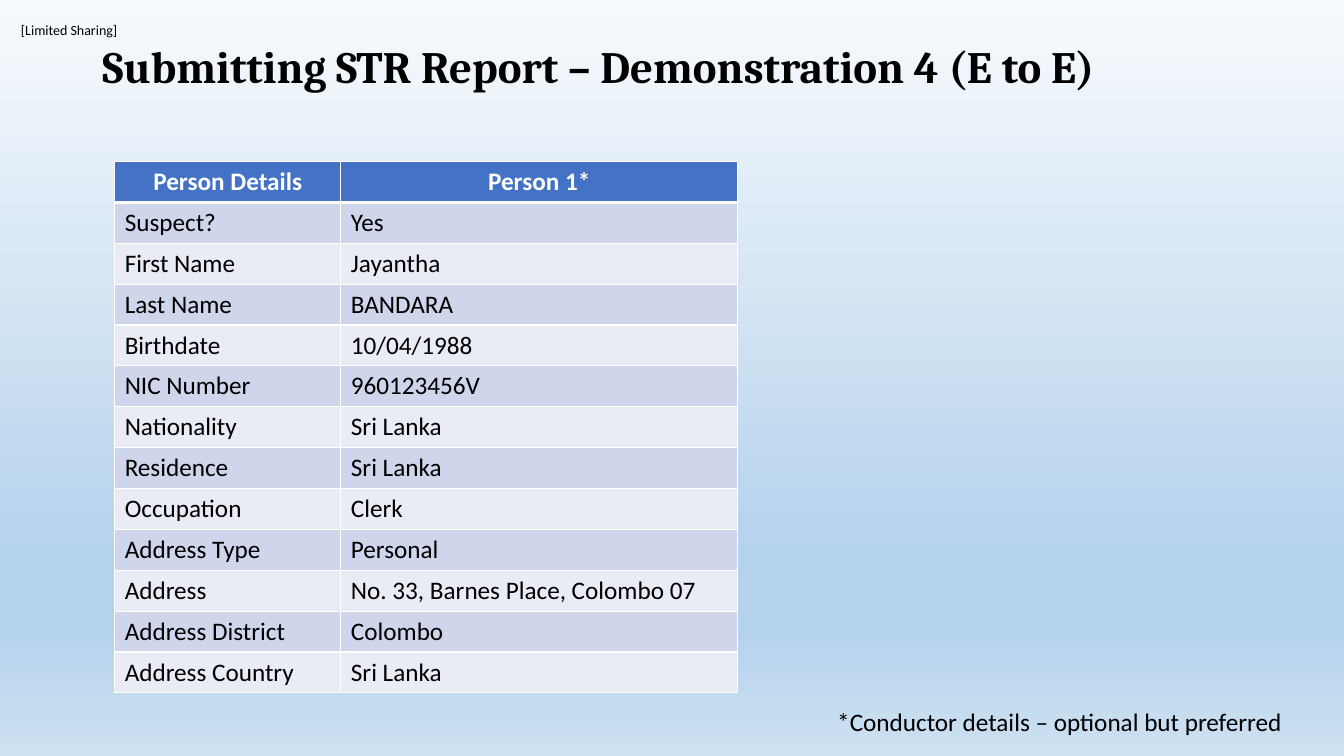
import pptx
import pptx.dml.color
import pptx.enum.text
import pptx.oxml
import pptx.oxml.ns
import pptx.util

Cm = pptx.util.Cm
Pt = pptx.util.Pt
ALIGN = pptx.enum.text.PP_ALIGN
ANCHOR = pptx.enum.text.MSO_ANCHOR

COLOURS = {
    "text": "000000",
    "header text": "FFFFFF",
    "border": "FFFFFF",
    "header": "4472C4",
    "odd row": "CFD5EA",
    "even row": "E9EBF5",
}
BACKGROUND_STOPS = [(0, "F7FAFD"), (74, "B5D2EC"), (83, "B5D2EC"), (100, "CEE1F2")]

BODY_FONT = {"name": "Calibri", "size": Pt(18), "bold": False}
HEADER_FONT = {**BODY_FONT, "bold": True}
LABEL_FONT = {**BODY_FONT, "size": Pt(10)}
TITLE_FONT = {"name": "Cambria", "size": Pt(32), "bold": True}

# text, (left, top, width, height) in cm, font, text frame format, paragraph format
NO_MARGINS = dict.fromkeys(
    ("margin_left", "margin_top", "margin_right", "margin_bottom"), 0)
TEXTS = [
    ("[Limited Sharing]", (0.53, 0.53, 2.52, 0.43), LABEL_FONT,
     {"word_wrap": False, **NO_MARGINS}, {}),
    ("Submitting STR Report – Demonstration 4 (E to E)", (2.33, 0.64, 29.21, 2.2),
     TITLE_FONT, {"word_wrap": True, "vertical_anchor": ANCHOR.MIDDLE},
     {"line_spacing": 0.9}),
    ("*Conductor details – optional but preferred", (20.85, 17.67, 11.86, 1.03),
     BODY_FONT, {"word_wrap": False}, {}),
]

PERSON_ROWS = [
    ("Person Details", "Person 1*"),
    ("Suspect?", "Yes"),
    ("First Name", "Jayantha"),
    ("Last Name", "BANDARA"),
    ("Birthdate", "10/04/1988"),
    ("NIC Number", "960123456V"),
    ("Nationality", "Sri Lanka"),
    ("Residence", "Sri Lanka"),
    ("Occupation", "Clerk"),
    ("Address Type", "Personal"),
    ("Address", "No. 33, Barnes Place, Colombo 07"),
    ("Address District", "Colombo"),
    ("Address Country", "Sri Lanka"),
]
TABLE_LEFT, TABLE_TOP = 2.89, 4.07
COLUMN_WIDTHS = (5.7, 10)
ROW_HEIGHT = 1.03


def rgb(name):
    return pptx.dml.color.RGBColor.from_string(COLOURS[name])


def apply_format(target, values):
    for name, value in values.items():
        setattr(target, name, value)


def write_text(text_frame, text, font, colour, paragraph_format):
    paragraph = text_frame.paragraphs[0]
    apply_format(paragraph, paragraph_format)
    run = paragraph.add_run()
    run.text = text
    apply_format(run.font, font)
    run.font.color.rgb = rgb(colour)


def paint_background(slide):
    """Fill the slide from top to bottom with BACKGROUND_STOPS."""
    fill = slide.background.fill
    fill.gradient()
    fill.gradient_angle = 270
    stop_list = next(slide.element.iter(pptx.oxml.ns.qn("a:gsLst")))
    for stop in list(stop_list):
        stop_list.remove(stop)
    for percent, colour in BACKGROUND_STOPS:
        stop_list.append(pptx.oxml.parse_xml(
            f'<a:gs {pptx.oxml.ns.nsdecls("a")} pos="{percent * 1000}">'
            f'<a:srgbClr val="{colour}"/></a:gs>'))


def add_borders(cell, widths):
    """Draw cell borders; widths maps the sides L, R, T and B to points."""
    properties = cell._tc.get_or_add_tcPr()
    for side, width in widths.items():
        properties.append(pptx.oxml.parse_xml(
            f'<a:ln{side} {pptx.oxml.ns.nsdecls("a")} w="{Pt(width)}"><a:solidFill>'
            f'<a:srgbClr val="{COLOURS["border"]}"/></a:solidFill></a:ln{side}>'))


def add_text(slide, text, box, font, frame_format, paragraph_format):
    text_frame = slide.shapes.add_textbox(*map(Cm, box)).text_frame
    apply_format(text_frame, frame_format)
    write_text(text_frame, text, font, "text", paragraph_format)


def add_person_table(slide):
    table = slide.shapes.add_table(
        len(PERSON_ROWS), len(COLUMN_WIDTHS), Cm(TABLE_LEFT), Cm(TABLE_TOP),
        Cm(sum(COLUMN_WIDTHS)), Cm(ROW_HEIGHT * len(PERSON_ROWS))).table
    for column, width in zip(table.columns, COLUMN_WIDTHS):
        column.width = Cm(width)
    for row_index, values in enumerate(PERSON_ROWS):
        table.rows[row_index].height = Cm(ROW_HEIGHT)
        is_header = row_index == 0
        if is_header:
            fill, colour, font = "header", "header text", HEADER_FONT
        else:
            fill = "odd row" if row_index % 2 else "even row"
            colour, font = "text", BODY_FONT
        alignment = ALIGN.CENTER if is_header else ALIGN.LEFT
        borders = {"L": 1, "R": 1, "T": 3 if row_index == 1 else 1,
                   "B": 3 if is_header else 1}
        for column_index, value in enumerate(values):
            cell = table.cell(row_index, column_index)
            add_borders(cell, borders)
            cell.fill.solid()
            cell.fill.fore_color.rgb = rgb(fill)
            write_text(cell.text_frame, value, font, colour, {"alignment": alignment})


def main():
    presentation = pptx.Presentation()
    presentation.slide_width = Cm(33.87)
    presentation.slide_height = Cm(19.05)
    slide = presentation.slides.add_slide(presentation.slide_layouts[6])
    paint_background(slide)
    for text in TEXTS:
        add_text(slide, *text)
    add_person_table(slide)
    presentation.save("out.pptx")


if __name__ == "__main__":
    main()
